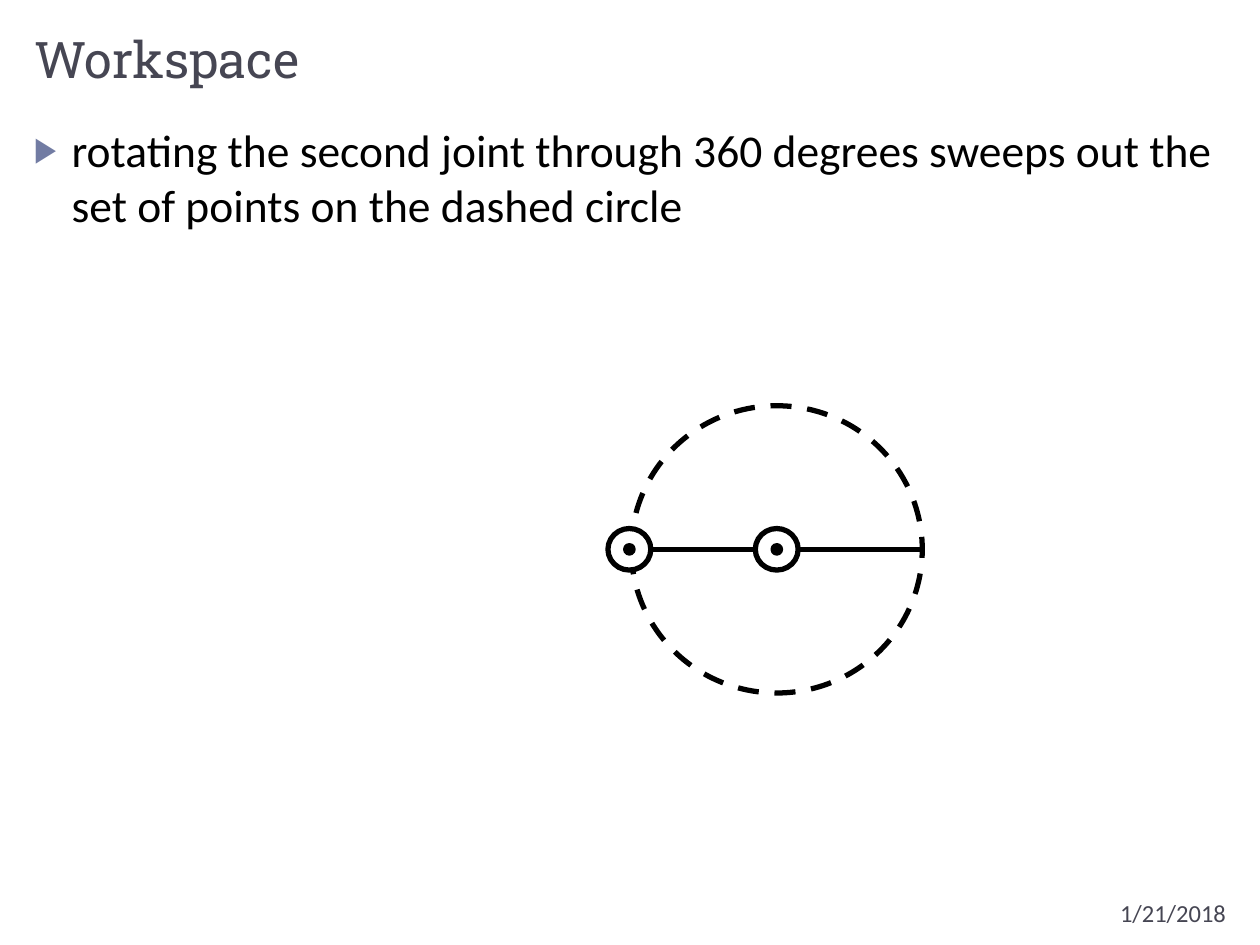
from dataclasses import dataclass

from lxml.etree import SubElement
from pptx import Presentation
from pptx.dml.color import RGBColor
from pptx.enum.dml import MSO_LINE
from pptx.enum.shapes import MSO_CONNECTOR, MSO_SHAPE
from pptx.enum.text import MSO_ANCHOR, PP_ALIGN
from pptx.oxml.ns import qn
from pptx.util import Inches, Pt


@dataclass(frozen=True)
class Theme:
    ink: RGBColor = RGBColor(0, 0, 0)
    paper: RGBColor = RGBColor(0xFF, 0xFF, 0xFF)
    heading: RGBColor = RGBColor(0x46, 0x46, 0x53)
    bullet: str = "727CA3"
    heading_font: str = "Roboto Slab"
    body_font: str = "Calibri"
    title_size: float = 28.8
    body_size: float = 26
    date_size: float = 14
    line_width: float = 3
    dot_line_width: float = 1.5


THEME = Theme()


def write_text(frame, text, *, size, font=THEME.body_font, color=THEME.ink,
               align=PP_ALIGN.LEFT, anchor=MSO_ANCHOR.TOP, bullet=None):
    frame.word_wrap = True
    frame.vertical_anchor = anchor
    para = frame.paragraphs[0]
    para.alignment = align
    if bullet:
        add_bullet(para, bullet)
    span = para.add_run()
    span.text = text
    span.font.name = font
    span.font.size = Pt(size)
    span.font.color.rgb = color


def add_bullet(para, symbol, indent=Inches(0.3)):
    properties = para._p.get_or_add_pPr()
    properties.set("marL", str(indent))
    properties.set("indent", str(-indent))
    color = SubElement(properties, qn("a:buClr"))
    SubElement(color, qn("a:srgbClr"), val=THEME.bullet)
    SubElement(properties, qn("a:buSzPct"), val="76000")
    SubElement(properties, qn("a:buFont"), typeface=THEME.body_font)
    SubElement(properties, qn("a:buChar"), char=symbol)


def add_title(page, text, left, top, width, height):
    title = page.shapes.title
    title.left, title.top = Inches(left), Inches(top)
    title.width, title.height = Inches(width), Inches(height)
    write_text(title.text_frame, text, size=THEME.title_size,
               font=THEME.heading_font, color=THEME.heading,
               anchor=MSO_ANCHOR.BOTTOM)


def add_text_box(page, text, left, top, width, height, **text_format):
    box = page.shapes.add_textbox(Inches(left), Inches(top),
                                  Inches(width), Inches(height))
    write_text(box.text_frame, text, **text_format)


def add_ellipse(page, center_x, center_y, width, height, *, fill=None,
                line_width=THEME.line_width, dash=None):
    ellipse = page.shapes.add_shape(
        MSO_SHAPE.OVAL, Inches(center_x - width / 2),
        Inches(center_y - height / 2), Inches(width), Inches(height))
    ellipse.shadow.inherit = False
    if fill is None:
        ellipse.fill.background()
    else:
        ellipse.fill.solid()
        ellipse.fill.fore_color.rgb = fill
    ellipse.line.color.rgb = THEME.ink
    ellipse.line.width = Pt(line_width)
    if dash:
        ellipse.line.dash_style = dash


def add_link(page, start_x, end_x, y):
    link = page.shapes.add_connector(
        MSO_CONNECTOR.STRAIGHT, Inches(start_x), Inches(y),
        Inches(end_x), Inches(y))
    link.line.color.rgb = THEME.ink
    link.line.width = Pt(THEME.line_width)
    SubElement(link._element.spPr, qn("a:effectLst"))


def add_arm_diagram(page, left, top, width, height):
    """Draw a stretched two-link arm and the circle its second joint sweeps."""
    link_length = 1.17
    center_x, center_y = left + width / 2, top + height / 2
    joints = (center_x - link_length, center_x)
    add_ellipse(page, center_x, center_y, width, height, dash=MSO_LINE.DASH)
    for joint_x in joints:
        add_link(page, joint_x, joint_x + link_length, center_y)
    for joint_x in joints:
        add_ellipse(page, joint_x, center_y, 0.34, 0.33, fill=THEME.paper)
        add_ellipse(page, joint_x, center_y, 0.08, 0.08, fill=THEME.ink,
                    line_width=THEME.dot_line_width)


def build_workspace_page(deck):
    page = deck.slides.add_slide(deck.slide_layouts[5])
    margin, content_width = 0.17, 9.67
    add_title(page, "Workspace", margin, 0.17, content_width, 0.58)
    add_text_box(page, "rotating the second joint through 360 degrees sweeps "
                 "out the set of points on the dashed circle",
                 margin, 0.92, content_width, 6,
                 size=THEME.body_size, bullet="▶")
    add_arm_diagram(page, 5.01, 3.22, 2.31, 2.28)
    add_text_box(page, "1/21/2018", 8, 7.08, 1.83, 0.27,
                 size=THEME.date_size, color=THEME.heading,
                 align=PP_ALIGN.RIGHT)


def main():
    deck = Presentation()
    deck.slide_width, deck.slide_height = Inches(10), Inches(7.5)
    build_workspace_page(deck)
    deck.save("out.pptx")


if __name__ == "__main__":
    main()
